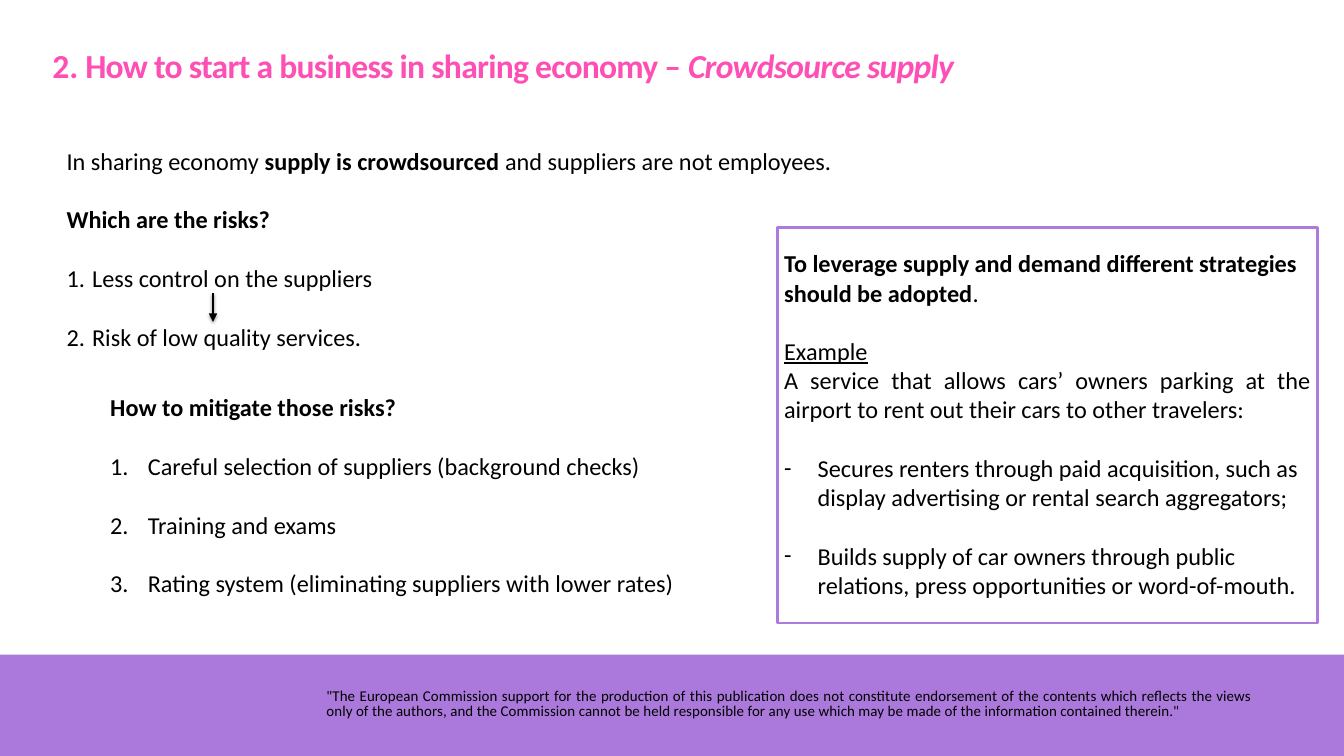
from lxml import etree
from pptx import Presentation
from pptx.dml.color import RGBColor
from pptx.enum.shapes import MSO_CONNECTOR, MSO_SHAPE
from pptx.enum.text import MSO_ANCHOR, MSO_AUTO_SIZE, PP_ALIGN
from pptx.oxml.ns import qn
from pptx.util import Inches, Pt

RECTANGLE = MSO_SHAPE.RECTANGLE
STRAIGHT = MSO_CONNECTOR.STRAIGHT
TOP = MSO_ANCHOR.TOP
NO_FIT = MSO_AUTO_SIZE.NONE
LEFT, JUSTIFY = PP_ALIGN.LEFT, PP_ALIGN.JUSTIFY

COLORS = {"title": "FD4FB4", "text": "000000", "band": "AB79DB", "frame": "AC7BDC"}
FONT = "Calibri"
GAP = 31.7


def rgb(name):
    """Return the palette colour with this name."""
    return RGBColor.from_string(COLORS[name])


def write(paragraph, text, size=26, color="text", bold=False, italic=False,
          underline=False, spacing=0):
    """Add one formatted run to a paragraph."""
    run = paragraph.add_run()
    run.text = text
    font = run.font
    font.name, font.size = FONT, Pt(size)
    font.bold, font.italic, font.underline = bold, italic, underline
    font.color.rgb = rgb(color)
    if spacing:
        run._r.get_or_add_rPr().set("spc", str(round(spacing * 100)))


def set_layout(paragraph, align=LEFT, before=0, bullet=None, indent=0, leading=1.0):
    """Set a paragraph's alignment, spacing, indent and bullet."""
    properties = paragraph._p.get_or_add_pPr()
    properties.set("marL", str(Inches(indent)))
    properties.set("indent", str(-Inches(indent) if bullet else 0))
    if bullet == "number":
        etree.SubElement(properties, qn("a:buAutoNum"), type="arabicPeriod")
    elif bullet:
        etree.SubElement(properties, qn("a:buFont"), typeface=FONT)
        etree.SubElement(properties, qn("a:buChar"), char=bullet)
    else:
        etree.SubElement(properties, qn("a:buNone"))
    paragraph.alignment = align
    paragraph.space_before, paragraph.space_after = Pt(before), Pt(0)
    paragraph.line_spacing = leading


class SlideBuilder:
    """Holds the style and the current slide."""

    def __init__(self, slide):
        """Keep the slide to draw on."""
        self.slide = slide

    def fill_text(self, frame, paragraphs, top_inset=0.05):
        """Fill a text frame with (runs, layout) pairs."""
        frame.word_wrap, frame.auto_size = True, NO_FIT
        frame.vertical_anchor = TOP
        frame.margin_left = frame.margin_right = Inches(0.1)
        frame.margin_top, frame.margin_bottom = Inches(top_inset), Inches(0.05)
        for index, (runs, layout) in enumerate(paragraphs):
            paragraph = frame.add_paragraph() if index else frame.paragraphs[0]
            set_layout(paragraph, **layout)
            for text, style in runs:
                write(paragraph, text, **style)

    def placeholder(self, index, box, paragraphs):
        """Move and fill a template placeholder."""
        holder = self.slide.placeholders[index]
        holder.left, holder.top, holder.width, holder.height = map(Inches, box)
        self.fill_text(holder.text_frame, paragraphs)

    def textbox(self, box, paragraphs):
        """Add a text box."""
        area = self.slide.shapes.add_textbox(*map(Inches, box))
        self.fill_text(area.text_frame, paragraphs)

    def rectangle(self, box, fill=None, line=None):
        """Add a rectangle, filled or outlined."""
        panel = self.slide.shapes.add_shape(RECTANGLE, *map(Inches, box))
        panel.shadow.inherit = False
        if fill:
            panel.fill.solid()
            panel.fill.fore_color.rgb = rgb(fill)
        else:
            panel.fill.background()
        if line:
            panel.line.color.rgb, panel.line.width = rgb(line), Pt(3)
        else:
            panel.line.fill.background()
        return panel

    def arrow(self, x, start, end):
        """Add a downward arrow with a soft shadow."""
        arrow = self.slide.shapes.add_connector(
            STRAIGHT, Inches(x), Inches(start), Inches(x), Inches(end))
        arrow.line.color.rgb, arrow.line.width = rgb("text"), Pt(3)
        etree.SubElement(arrow.line._get_or_add_ln(), qn("a:tailEnd"), type="triangle")
        effects = etree.SubElement(arrow._element.spPr, qn("a:effectLst"))
        shadow = etree.SubElement(effects, qn("a:outerShdw"), blurRad=str(Pt(3.1)),
                                  dist=str(Pt(1.8)), dir="5400000", rotWithShape="0")
        tint = etree.SubElement(shadow, qn("a:srgbClr"), val=COLORS["text"])
        etree.SubElement(tint, qn("a:alpha"), val="35000")


def main():
    """Build the slide and save it."""
    deck = Presentation()
    deck.slide_width, deck.slide_height = Inches(20), Inches(11.25)
    page = SlideBuilder(deck.slides.add_slide(deck.slide_layouts[3]))
    bold, spaced = {"bold": True}, {"before": GAP}

    page.rectangle((0, 9.74, 20, 1.51), fill="band")
    disclaimer = (
        "\"The European Commission support for the production of this publication does "
        "not constitute endorsement of the contents which reflects the views only of the "
        "authors, and the Commission cannot be held responsible for any use which may be "
        "made of the information contained therein.\"")
    page.textbox((4.75, 10.21, 14, 0.55), [
        ([(disclaimer, {"size": 16, "spacing": 0.1})],
         {"align": JUSTIFY, "indent": 0.01, "leading": Pt(16.1)})])

    heading = {"size": 36, "color": "title", "bold": True}
    tight = {**heading, "spacing": -0.8}
    page.placeholder(0, (0.68, 0.62, 15.24, 0.71), [
        ([("2.", heading),
          (" How to start a business in sharing economy – ", tight),
          ("Crowdsource supply", {**tight, "italic": True})], {})])

    strategies = page.rectangle((11.57, 3.38, 8.04, 5.89), line="frame")
    dashed = {"before": GAP, "bullet": "-", "indent": 0.5}
    page.fill_text(strategies.text_frame, [
        ([("To leverage supply and demand different strategies should be adopted", bold),
          (".", {})], {}),
        ([("Example", {"underline": True})], {"align": JUSTIFY, **spaced}),
        ([("A service that allows cars’ owners parking at the airport to rent out "
           "their cars to other travelers:", {})], {"align": JUSTIFY}),
        ([("Secures renters through paid acquisition, such as display advertising or "
           "rental search aggregators;", {})], dashed),
        ([("Builds supply of car owners through public relations, press opportunities "
           "or word-of-mouth.", {})], dashed),
    ], top_inset=0.32)

    risks = ["Less control on the suppliers", "Risk of low quality services."]
    risk_item = {"before": GAP, "bullet": "number", "indent": 0.38}
    page.placeholder(1, (0.89, 2.12, 18.72, 3.16), [
        ([("In sharing economy ", {}), ("supply is crowdsourced ", bold),
          ("and suppliers are not employees.", {})], {}),
        ([("Which are the risks?", bold)], spaced),
        *[([(risk, {})], risk_item) for risk in risks]])

    remedies = ["Careful selection of suppliers (background checks)",
                "Training and exams",
                "Rating system (eliminating suppliers with lower rates)"]
    remedy_item = {**risk_item, "indent": 0.56}
    page.placeholder(2, (1.54, 5.79, 17.42, 3.26), [
        ([("How to mitigate those risks?", bold)], {}),
        *[([(remedy, {})], remedy_item) for remedy in remedies]])

    page.arrow(3.17, 4.36, 4.79)
    deck.save("out.pptx")


if __name__ == "__main__":
    main()
